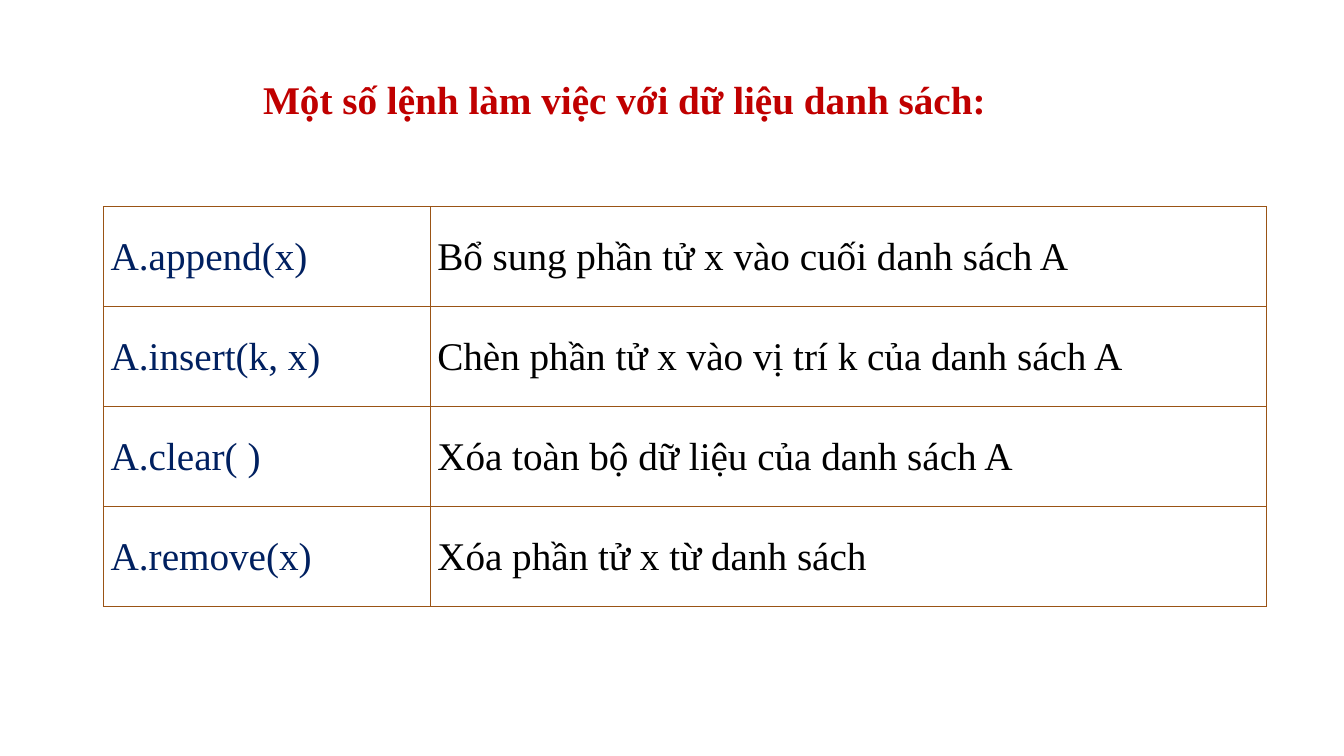
"""Build a slide with a table of Python list commands."""
from lxml.etree import SubElement
from pptx import Presentation
from pptx.dml.color import RGBColor as RGB
from pptx.enum.text import MSO_ANCHOR as Anchor, MSO_AUTO_SIZE as Auto, PP_ALIGN as Align
from pptx.oxml.ns import qn
from pptx.util import Cm, Pt

COLORS = {"title": "C00000", "code": "002060", "text": "000000", "line": "9A5315"}
ROWS = [
    ("A.append(x)", "Bổ sung phần tử x vào cuối danh sách A"),
    ("A.insert(k, x)", "Chèn phần tử x vào vị trí k của danh sách A"),
    ("A.clear( )", "Xóa toàn bộ dữ liệu của danh sách A"),
    ("A.remove(x)", "Xóa phần tử x từ danh sách"),
]
COLS = [(8.23, "code", Align.LEFT), (21.08, "text", Align.JUSTIFY)]
LEFT, TOP, HIGH = 2.61, 5.21, 2.52


def write(frame, text, color, align=Align.LEFT, bold=False, space=1.0):
    para = frame.paragraphs[0]
    para.alignment = align
    para.line_spacing = space
    run = para.add_run()
    run.text = text
    font = run.font
    font.name = "Times New Roman"
    font.size = Pt(28)
    font.bold = bold
    font.color.rgb = RGB.from_string(COLORS[color])


def border(cell):
    props = cell._tc.get_or_add_tcPr()
    for side in ("L", "R", "T", "B"):
        line = SubElement(props, qn(f"a:ln{side}"), w=str(Pt(1)))
        fill = SubElement(line, qn("a:solidFill"))
        SubElement(fill, qn("a:srgbClr"), val=COLORS["line"])


deck = Presentation()
deck.slide_width, deck.slide_height = Cm(33.87), Cm(19.05)
slide = deck.slides.add_slide(deck.slide_layouts[6])

title = slide.shapes.add_textbox(Cm(6.38), Cm(1.6), Cm(18.92), Cm(1.52)).text_frame
title.word_wrap = False
title.auto_size = Auto.SHAPE_TO_FIT_TEXT
write(title, "Một số lệnh làm việc với dữ liệu danh sách:", "title",
      align=Align.JUSTIFY, bold=True, space=1.15)

wide = sum(col[0] for col in COLS)
table = slide.shapes.add_table(len(ROWS), len(COLS), Cm(LEFT), Cm(TOP),
                               Cm(wide), Cm(HIGH * len(ROWS))).table
table.first_row = table.horz_banding = False
for col, (width, color, align) in enumerate(COLS):
    table.columns[col].width = Cm(width)
    for row, texts in enumerate(ROWS):
        table.rows[row].height = Cm(HIGH)
        cell = table.cell(row, col)
        border(cell)
        cell.fill.background()
        cell.vertical_anchor = Anchor.MIDDLE
        cell.margin_left = cell.margin_right = Cm(0.18)
        cell.margin_top = cell.margin_bottom = 0
        write(cell.text_frame, texts[col], color, align=align)

deck.save("out.pptx")
